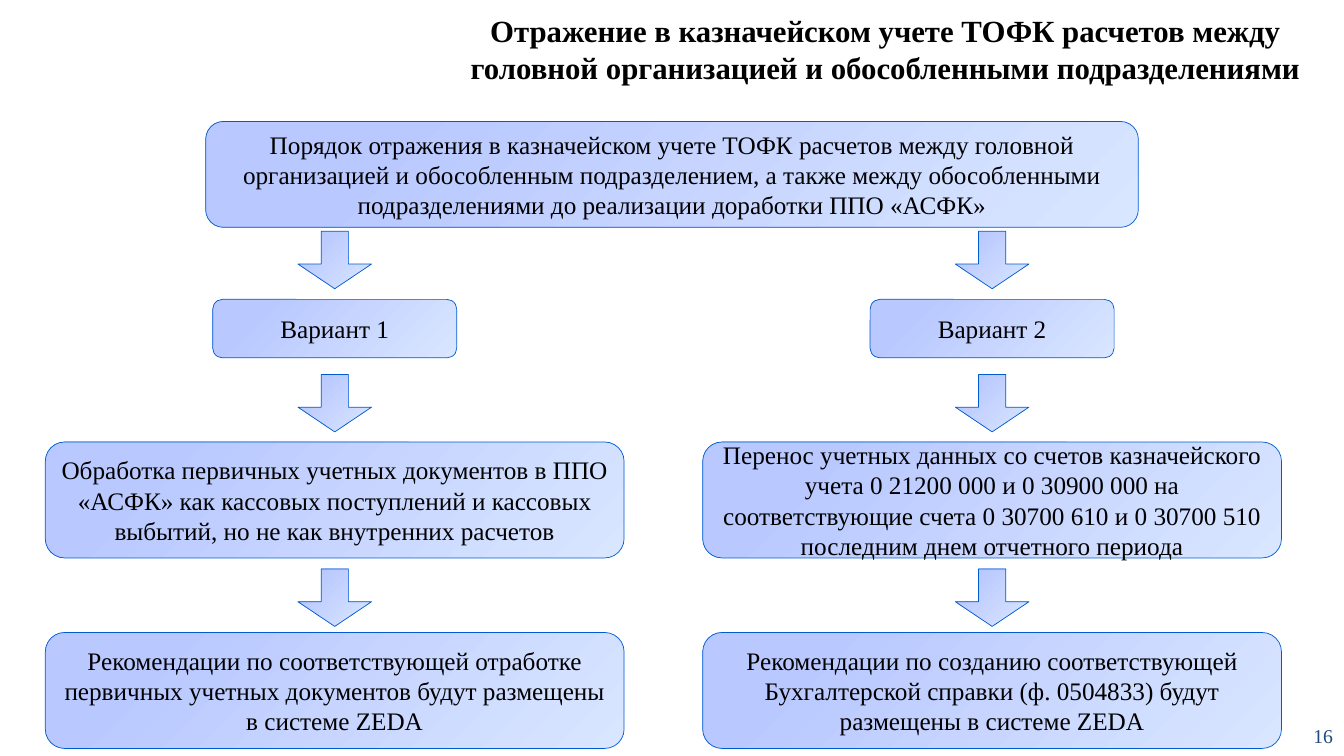
from lxml.etree import SubElement
from pptx import Presentation
from pptx.dml.color import RGBColor as RGB
from pptx.enum.shapes import MSO_SHAPE as SHAPE
from pptx.enum.text import MSO_ANCHOR as ANCHOR, MSO_AUTO_SIZE as AUTO, PP_ALIGN as ALIGN
from pptx.oxml.ns import qn
from pptx.util import Inches, Pt

COLORS = {"text": "000000", "number": "1F497D", "line": "005BD3",
          "fill_start": "B9C8FF", "fill_end": "D9E6FF"}
FONT = "Times New Roman"
WIDTH, HEIGHT = 13.33, 7.5

# Column centres and row centres of the flow chart, in inches
COL_X, COL_STEP = 3.32, 6.52
ARROW_ROWS = (2.58, 4.0, 5.93)
BOX_ROWS = (3.26, 4.96, 6.85)
BOX_SIZES = ((2.42, 0.58), (5.74, 1.15), (5.74, 1.15))
ARROW_SIZE = (0.57, 0.73)

TITLE = ("Отражение в казначейском учете ТОФК расчетов между головной "
         "организацией и обособленными подразделениями")
HEAD = ("Порядок отражения в казначейском учете ТОФК расчетов между головной "
        "организацией и обособленным подразделением, а также между обособленными "
        "подразделениями до реализации доработки ППО «АСФК»")
VARIANTS = (
    ("Вариант 1",
     "Обработка первичных учетных документов в ППО «АСФК» как кассовых "
     "поступлений и кассовых выбытий, но не как внутренних расчетов",
     "Рекомендации по соответствующей отработке первичных учетных документов "
     "будут размещены в системе ZEDA"),
    ("Вариант 2",
     "Перенос учетных данных со счетов казначейского учета 0 21200 000 и "
     "0 30900 000 на соответствующие счета 0 30700 610 и 0 30700 510 "
     "последним днем отчетного периода",
     "Рекомендации по созданию соответствующей Бухгалтерской справки "
     "(ф. 0504833) будут размещены в системе ZEDA"),
)


def color(name):
    return RGB.from_string(COLORS[name])


def write(sp, text, size, align=ALIGN.CENTER, ink="text", bold=False, **frame):
    tf = sp.text_frame
    for name, value in frame.items():
        setattr(tf, name, value)
    p = tf.paragraphs[0]
    p.alignment = align
    r = p.add_run()
    r.text = text
    for name, value in {"name": FONT, "size": Pt(size), "bold": bold}.items():
        setattr(r.font, name, value)
    r.font.color.rgb = color(ink)


def paint(sp):
    """Radial gradient from the upper left corner and a thin outline."""
    sp.shadow.inherit = False
    sp.fill.gradient()
    stops = zip(sp.fill.gradient_stops, (0.18, 1), ("fill_start", "fill_end"))
    for stop, position, name in stops:
        stop.position = position
        stop.color.rgb = color(name)
    grad = sp._element.spPr.find(qn("a:gradFill"))
    grad.set("rotWithShape", "0")
    grad.remove(grad.find(qn("a:lin")))
    radial = SubElement(grad, qn("a:path"), path="circle")
    SubElement(radial, qn("a:fillToRect"), r="100000", b="100000")
    sp.line.color.rgb = color("line")
    sp.line.width = Pt(0.5)


def add_centred(slide, kind, x, y, size):
    w, h = size
    sp = slide.shapes.add_shape(kind, Inches(x - w / 2), Inches(y - h / 2),
                                Inches(w), Inches(h))
    paint(sp)
    return sp


def add_box(slide, x, y, size, text):
    sp = add_centred(slide, SHAPE.ROUNDED_RECTANGLE, x, y, size)
    write(sp, text, 18, word_wrap=True, vertical_anchor=ANCHOR.MIDDLE)


def add_arrow(slide, x, y):
    sp = add_centred(slide, SHAPE.RIGHT_ARROW, x, y, ARROW_SIZE)
    sp.rotation = 90
    sp.adjustments[0], sp.adjustments[1] = 0.37, 0.43


def add_title(slide):
    sp = slide.shapes.title
    place = {"left": 4.25, "top": 0.07, "width": 9.06, "height": 0.84}
    for name, value in place.items():
        setattr(sp, name, Inches(value))
    write(sp, TITLE, 22, bold=True, word_wrap=True,
          vertical_anchor=ANCHOR.TOP, auto_size=AUTO.NONE)


def add_number(slide, number):
    w, h = 0.46, 0.32
    sp = slide.shapes.add_textbox(Inches(WIDTH - w - 0.01), Inches(HEIGHT - h - 0.04),
                                  Inches(w), Inches(h))
    write(sp, number, 14, ALIGN.RIGHT, "number", word_wrap=False,
          vertical_anchor=ANCHOR.MIDDLE)


def main():
    prs = Presentation()
    prs.slide_width, prs.slide_height = Inches(WIDTH), Inches(HEIGHT)
    slide = prs.slides.add_slide(prs.slide_layouts[5])
    add_title(slide)
    add_box(slide, WIDTH / 2, 1.73, (9.25, 1.05), HEAD)
    for col, texts in enumerate(VARIANTS):
        x = COL_X + col * COL_STEP
        for arrow_y, y, size, text in zip(ARROW_ROWS, BOX_ROWS, BOX_SIZES, texts):
            add_arrow(slide, x, arrow_y)
            add_box(slide, x, y, size, text)
    add_number(slide, "16")
    prs.save("out.pptx")


if __name__ == "__main__":
    main()
